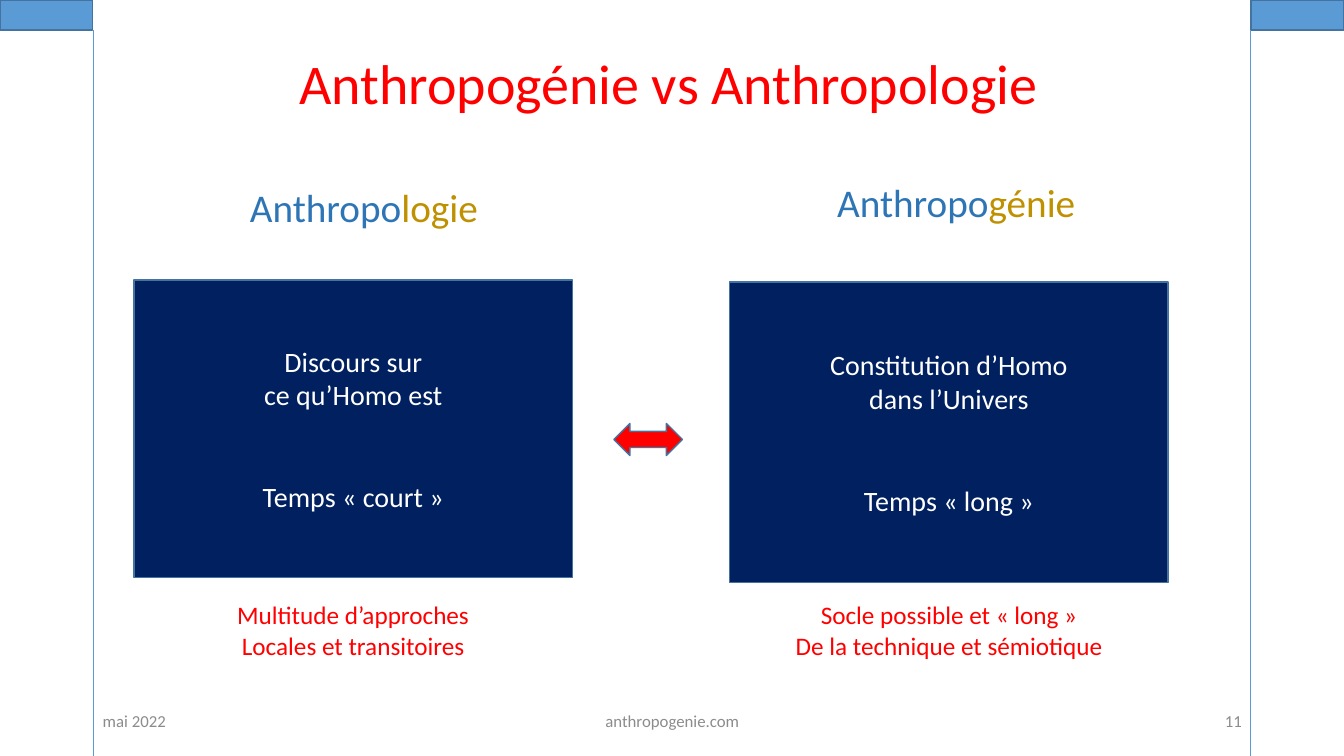
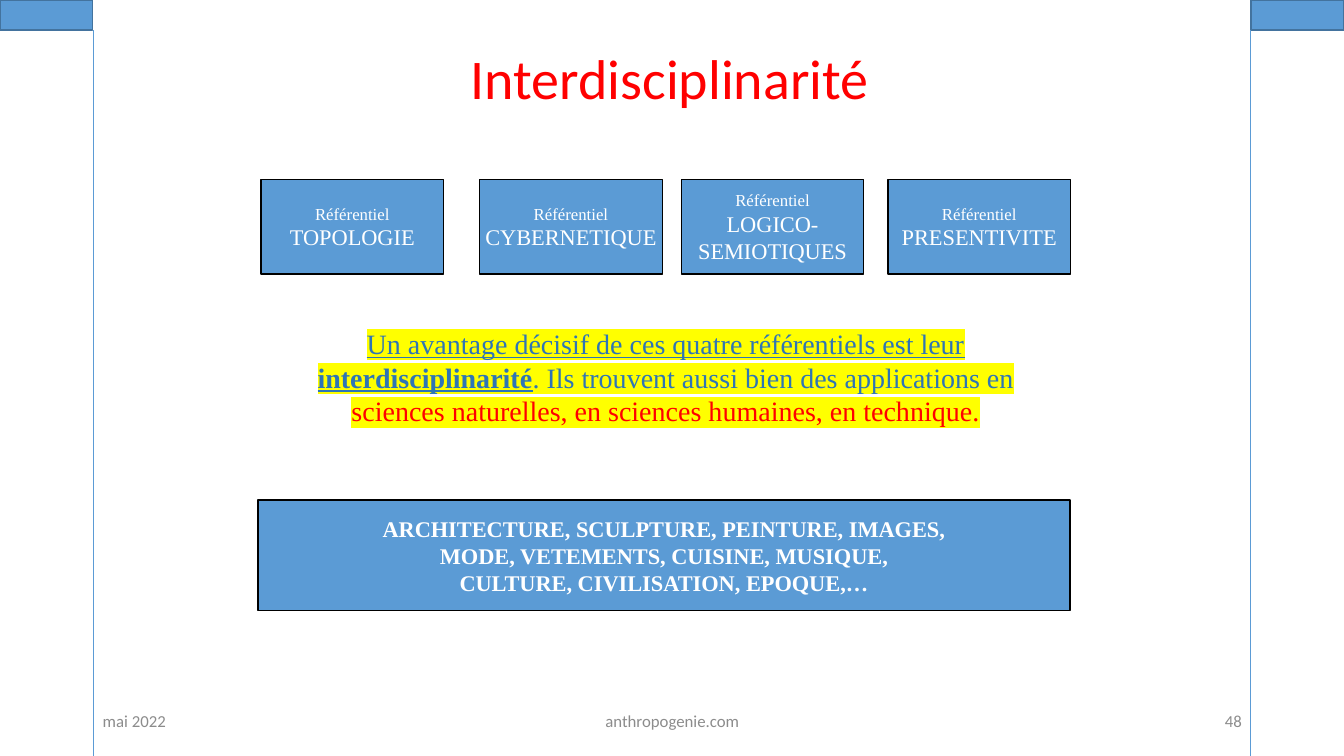
import pptx
import pptx.util
import pptx.dml.color
import pptx.enum.shapes
import pptx.enum.text
import pptx.oxml
import pptx.oxml.ns
import lxml.etree

Cm = pptx.util.Cm
Pt = pptx.util.Pt
SHAPES = pptx.enum.shapes.MSO_SHAPE
ALIGN = pptx.enum.text.PP_ALIGN
ANCHOR = pptx.enum.text.MSO_ANCHOR

RED, NAVY, BLUE, EDGE = "FF0000", "002060", "5B9BD5", "43739E"
DEEP_BLUE, GOLD, GREY = "2E75B6", "BF9000", "8C8C8C"
WHITE, BLACK, YELLOW = "FFFFFF", "000000", "FFFF00"

LEFT = {"alignment": ALIGN.LEFT}
CENTER = {"alignment": ALIGN.CENTER}
RIGHT = {"alignment": ALIGN.RIGHT}
APART = {"alignment": ALIGN.CENTER, "space_before": Pt(49)}

TOP = {"vertical_anchor": ANCHOR.TOP, "word_wrap": False}
TOP_WRAPPED = {"vertical_anchor": ANCHOR.TOP, "word_wrap": True}
MIDDLE = {"vertical_anchor": ANCHOR.MIDDLE, "word_wrap": False}
MIDDLE_WRAPPED = {"vertical_anchor": ANCHOR.MIDDLE, "word_wrap": True}

TITLE = {"name": "Calibri", "size": Pt(40)}
HEADING = {"name": "Calibri", "size": Pt(28)}
BODY = {"name": "Calibri", "size": Pt(20)}
CAPTION = {"name": "Calibri", "size": Pt(18)}
FOOTER = {"name": "Calibri", "size": Pt(12)}
LABEL = {"name": "Times New Roman", "size": Pt(12)}
CARD = {"name": "Times New Roman", "size": Pt(16)}
DOMAINS = {**CARD, "bold": True}
PLAIN = {"name": "Times New Roman", "size": Pt(20)}
UNDERLINED = {**PLAIN, "underline": True}
STRONG = {**UNDERLINED, "bold": True}


def colour(value):
    return pptx.dml.color.RGBColor.from_string(value)


def write_text(shape, frame_format, paragraphs, highlight=None):
    frame = shape.text_frame
    frame.auto_size = pptx.enum.text.MSO_AUTO_SIZE.NONE
    for name, value in frame_format.items():
        setattr(frame, name, value)
    for index, (paragraph_format, runs) in enumerate(paragraphs):
        paragraph = frame.add_paragraph() if index else frame.paragraphs[0]
        for name, value in paragraph_format.items():
            setattr(paragraph, name, value)
        for text, font_format, text_colour in runs:
            run = paragraph.add_run()
            run.text = text
            for name, value in font_format.items():
                setattr(run.font, name, value)
            run.font.color.rgb = colour(text_colour)
            if highlight:
                mark = lxml.etree.Element(pptx.oxml.ns.qn("a:highlight"))
                lxml.etree.SubElement(mark, pptx.oxml.ns.qn("a:srgbClr"), val=highlight)
                run.font._element.find(pptx.oxml.ns.qn("a:solidFill")).addnext(mark)


presentation = pptx.Presentation()
presentation.slide_width = Cm(33.87)
presentation.slide_height = Cm(19.05)

comparison_texts = []
comparison_shapes = [(SHAPES.LEFT_RIGHT_ARROW, (15.47, 10.67, 1.73, 0.81), RED, EDGE, [])]
for ending, heading_box, card_box, caption_box, definition, duration, captions in [
    ("logie", (6.05, 4.5, 6.32, 1.45), (3.38, 7.06, 11.05, 7.49), (5.61, 14.99, 6.58, 1.8),
     ["Discours sur", "ce qu’Homo est"], "Temps « court »",
     ["Multitude d’approches", "Locales et transitoires"]),
    ("génie", (20.85, 4.37, 6.58, 1.45), (18.39, 7.11, 11.05, 7.57), (19.74, 14.99, 8.36, 1.8),
     ["Constitution d’Homo", "dans l’Univers"], "Temps « long »",
     ["Socle possible et « long »", "De la technique et sémiotique"]),
]:
    heading = [(LEFT, [("Anthropo", HEADING, DEEP_BLUE), (ending, HEADING, GOLD)])]
    comparison_texts.append((heading_box, TOP, heading, None))
    caption = [(CENTER, [(line, CAPTION, RED)]) for line in captions]
    comparison_texts.append((caption_box, TOP, caption, None))
    card = [(CENTER, [(line, BODY, WHITE)]) for line in definition]
    card.append((APART, [(duration, BODY, WHITE)]))
    comparison_shapes.append((SHAPES.RECTANGLE, card_box, NAVY, EDGE, card))

advantage = [(CENTER, [
    ("Un avantage décisif de ces quatre référentiels est leur ", UNDERLINED, DEEP_BLUE),
    ("interdisciplinarité", STRONG, DEEP_BLUE),
    (". Ils trouvent aussi bien des applications en ", PLAIN, DEEP_BLUE),
    ("sciences naturelles, en sciences humaines, en technique.", PLAIN, RED),
])]
discipline_texts = [((6.58, 8.1, 20.4, 2.82), TOP_WRAPPED, advantage, YELLOW)]
domains = [(CENTER, [(line, DOMAINS, WHITE)]) for line in [
    "ARCHITECTURE, SCULPTURE, PEINTURE, IMAGES,",
    "MODE, VETEMENTS, CUISINE, MUSIQUE,",
    "CULTURE, CIVILISATION, EPOQUE,…",
]]
discipline_shapes = [(SHAPES.RECTANGLE, (6.5, 12.6, 20.47, 2.79), BLUE, BLACK, domains)]
for left, names in [
    (6.58, ["TOPOLOGIE"]),
    (12.09, ["CYBERNETIQUE"]),
    (17.17, ["LOGICO-", "SEMIOTIQUES"]),
    (22.38, ["PRESENTIVITE"]),
]:
    card = [(CENTER, [("Référentiel", LABEL, WHITE)])]
    card += [(CENTER, [(name, CARD, WHITE)]) for name in names]
    discipline_shapes.append((SHAPES.RECTANGLE, (left, 4.52, 4.6, 2.39), BLUE, BLACK, card))

bands = [(SHAPES.RECTANGLE, (left, 0, 2.34, 0.76), BLUE, EDGE, []) for left in (0, 31.53)]

for title, title_box, number, texts, shapes in [
    ("Anthropogénie vs Anthropologie", (7.29, 1.09, 19.3, 1.96), "11",
     comparison_texts, comparison_shapes),
    ("Interdisciplinarité", (11.61, 0.97, 10.64, 1.96), "48",
     discipline_texts, discipline_shapes),
]:
    slide = presentation.slides.add_slide(presentation.slide_layouts[5])
    title_shape = slide.shapes.title
    for name, value in zip(("left", "top", "width", "height"), title_box):
        setattr(title_shape, name, Cm(value))
    write_text(title_shape, TOP, [(LEFT, [(title, TITLE, RED)])])

    footers = [
        ((left, 17.65, width, 1.02), MIDDLE_WRAPPED, [(side, [(text, FOOTER, GREY)])], None)
        for left, width, side, text in [
            (2.34, 7.62, LEFT, "mai 2022"),
            (11.23, 11.43, CENTER, "anthropogenie.com"),
            (23.93, 7.62, RIGHT, number),
        ]
    ]
    for box, frame_format, paragraphs, highlight in footers + texts:
        text_box = slide.shapes.add_textbox(*map(Cm, box))
        write_text(text_box, frame_format, paragraphs, highlight)

    for kind, box, fill, line, paragraphs in shapes + bands:
        shape = slide.shapes.add_shape(kind, *map(Cm, box))
        shape.shadow.inherit = False
        shape.fill.solid()
        shape.fill.fore_color.rgb = colour(fill)
        shape.line.color.rgb = colour(line)
        shape.line.width = Pt(1)
        write_text(shape, MIDDLE, paragraphs)

    for x in (2.36, 31.52):
        margin_line = slide.shapes.add_connector(
            pptx.enum.shapes.MSO_CONNECTOR.STRAIGHT, Cm(x), Cm(0.76), Cm(x), Cm(19.05))
        margin_line.line.color.rgb = colour(BLUE)
        margin_line.line.width = Pt(0.5)
        lxml.etree.SubElement(margin_line._element.spPr, pptx.oxml.ns.qn("a:effectLst"))

presentation.save("out.pptx")
